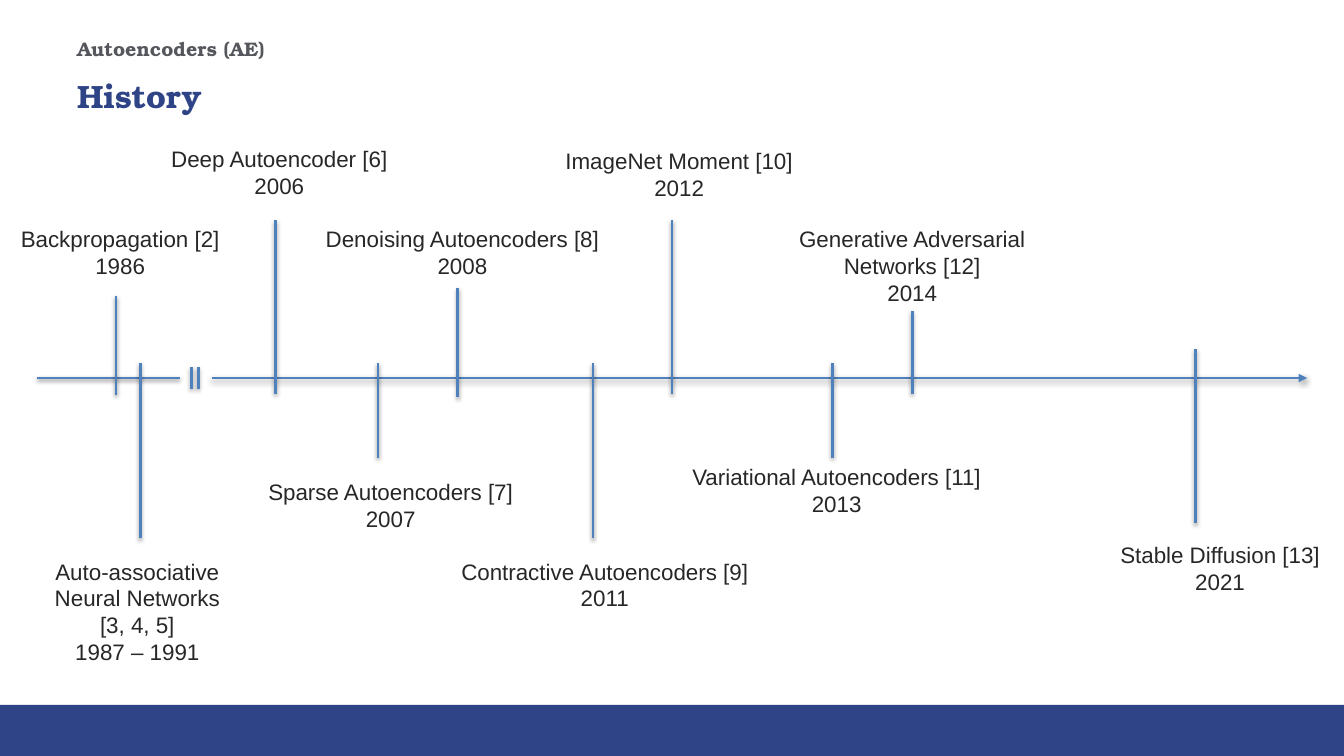
from dataclasses import dataclass

from lxml import etree
from pptx import Presentation
from pptx.dml.color import RGBColor
from pptx.enum.shapes import MSO_CONNECTOR, MSO_SHAPE
from pptx.enum.text import MSO_ANCHOR, PP_ALIGN
from pptx.oxml.ns import qn
from pptx.util import Inches, Pt

STRAIGHT = MSO_CONNECTOR.STRAIGHT
RECTANGLE = MSO_SHAPE.RECTANGLE
TOP, MIDDLE = MSO_ANCHOR.TOP, MSO_ANCHOR.MIDDLE
LEFT, CENTER = PP_ALIGN.LEFT, PP_ALIGN.CENTER

COLUMNS, ROWS = 160, 90
AXIS_ROW = 45
BREAK_HALF = 1.3
LABEL_PADDING, LABEL_LINE = 1.2, 3.2


@dataclass(frozen=True)
class Theme:
    navy: str = "2F4486"
    gray: str = "55575D"
    ink: str = "272727"
    line: str = "4F81BD"
    shadow: str = "000000"
    heading_font: str = "TeX Gyre Bonum"
    label_font: str = "Arial"
    title_size: int = 23
    section_size: int = 14
    label_size: int = 16
    line_width: int = 2


class TimelineSlide:
    def __init__(self, deck, theme):
        self.theme = theme
        self.slide = deck.slides.add_slide(deck.slide_layouts[6])
        self.column = deck.slide_width / COLUMNS
        self.row = deck.slide_height / ROWS

    def place(self, left, top, width, height):
        return (round(left * self.column), round(top * self.row),
                round(width * self.column), round(height * self.row))

    def band(self, top, height):
        bar = self.slide.shapes.add_shape(RECTANGLE, *self.place(0, top, COLUMNS, height))
        bar.shadow.inherit = False
        bar.fill.solid()
        bar.fill.fore_color.rgb = RGBColor.from_string(self.theme.navy)
        bar.line.fill.background()

    def text(self, lines, box, font, size, color, bold=False,
             align=LEFT, anchor=TOP, wrap=True):
        frame = self.slide.shapes.add_textbox(*self.place(*box)).text_frame
        frame.word_wrap = wrap
        frame.vertical_anchor = anchor
        frame.text = "\n".join(lines)
        for paragraph in frame.paragraphs:
            paragraph.alignment = align
            paragraph.font.name = font
            paragraph.font.size = Pt(size)
            paragraph.font.bold = bold
            paragraph.font.color.rgb = RGBColor.from_string(color)

    def heading(self, wording, box, size, color, anchor=TOP):
        self.text([wording], box, self.theme.heading_font, size, color, True, anchor=anchor)

    def label(self, lines, left, top, width):
        height = LABEL_PADDING + LABEL_LINE * len(lines)
        self.text(lines, (left, top, width, height), self.theme.label_font,
                  self.theme.label_size, self.theme.ink, align=CENTER, wrap=False)

    def line(self, x1, y1, x2, y2, arrow=False):
        stroke = self.slide.shapes.add_connector(
            STRAIGHT, *self.place(x1, y1, x2, y2))
        stroke.line.color.rgb = RGBColor.from_string(self.theme.line)
        stroke.line.width = Pt(self.theme.line_width)
        if arrow:
            etree.SubElement(stroke.line._get_or_add_ln(), qn("a:tailEnd"), type="triangle")
        effects = etree.SubElement(stroke._element.spPr, qn("a:effectLst"))
        shadow = etree.SubElement(
            effects, qn("a:outerShdw"), blurRad=str(Pt(3.1)), dist=str(Pt(1.6)),
            dir="5400000", rotWithShape="0")
        tint = etree.SubElement(shadow, qn("a:srgbClr"), val=self.theme.shadow)
        etree.SubElement(tint, qn("a:alpha"), val="38000")

    def tick(self, column, top, bottom):
        self.line(column, top, column, bottom)


EVENTS = [
    ((13.8, 35.2, 47), (1.1, 26.2, 26.4), ["Backpropagation [2]", "1986"]),
    ((16.7, 43.2, 64.1), (4.9, 65.8, 22.9),
     ["Auto-associative", "Neural Networks", "[3, 4, 5]", "1987 – 1991"]),
    ((32.8, 26.2, 46.9), (18.6, 16.7, 29.3), ["Deep Autoencoder [6]", "2006"]),
    ((45, 43.2, 54.5), (30.2, 56.3, 32.6), ["Sparse Autoencoders [7]", "2007"]),
    ((54.5, 34.3, 47.3), (37.4, 26.2, 35.3), ["Denoising Autoencoders [8]", "2008"]),
    ((70.6, 43.2, 64.1), (53.5, 65.8, 37), ["Contractive Autoencoders [9]", "2011"]),
    ((80, 26.2, 46.9), (65.9, 16.9, 29.9), ["ImageNet Moment [10]", "2012"]),
    ((99.1, 43.2, 54.5), (81, 54.5, 37.2), ["Variational Autoencoders [11]", "2013"]),
    ((108.6, 37, 46.9), (93.8, 26.2, 29.6),
     ["Generative Adversarial", "Networks [12]", "2014"]),
    ((142.3, 41.5, 62.3), (132, 63.8, 26.5), ["Stable Diffusion [13]", "2021"]),
]


def main():
    deck = Presentation()
    deck.slide_width, deck.slide_height = Inches(13.33), Inches(7.5)
    theme = Theme()
    history = TimelineSlide(deck, theme)

    history.band(83.9, 6.1)
    history.heading("History", (8, 8.3, 144, 6.2), theme.title_size, theme.navy, MIDDLE)
    history.heading("Autoencoders (AE)", (8, 3.8, 128.6, 4.6), theme.section_size, theme.gray)

    history.line(4.4, AXIS_ROW, 21.4, AXIS_ROW)
    history.line(25.2, AXIS_ROW, 155.6, AXIS_ROW, arrow=True)
    for column in (22.8, 23.6):
        history.tick(column, AXIS_ROW - BREAK_HALF, AXIS_ROW + BREAK_HALF)

    for mark, label_place, lines in EVENTS:
        history.tick(*mark)
        history.label(lines, *label_place)

    deck.save("out.pptx")


if __name__ == "__main__":
    main()
